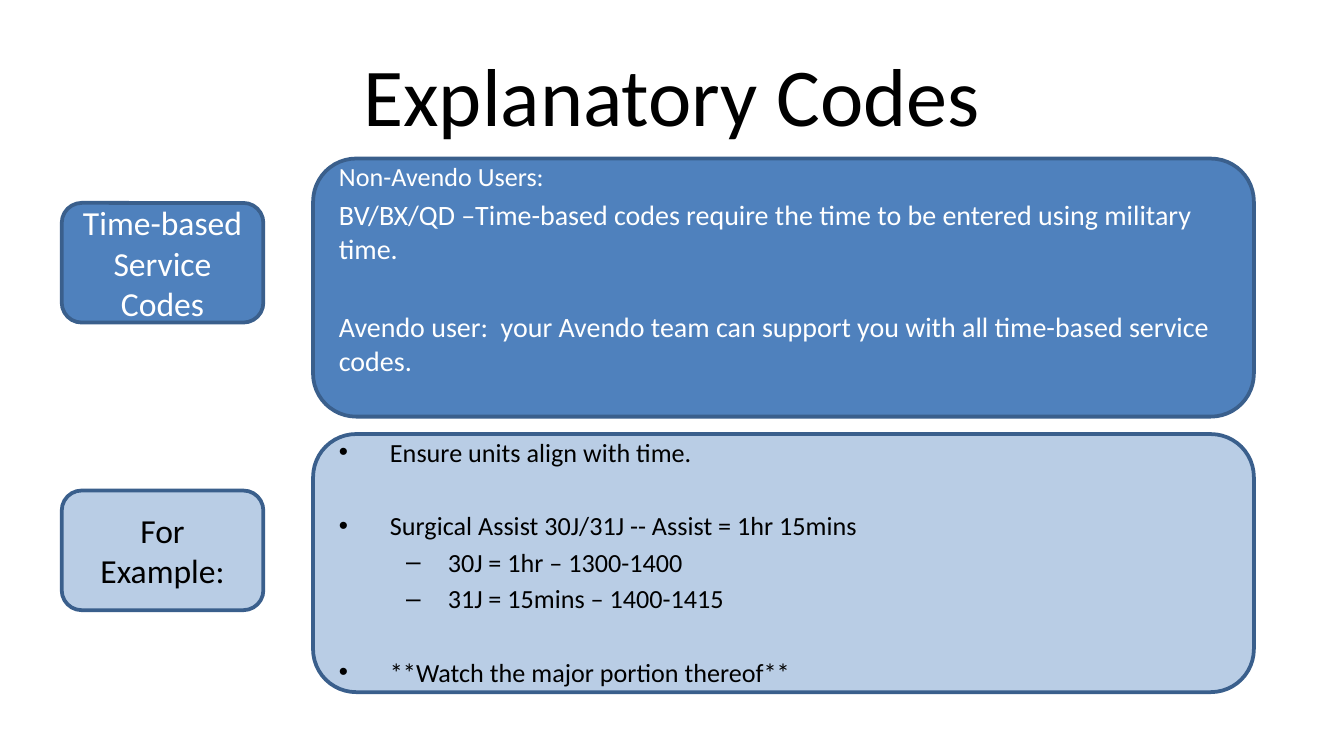
from dataclasses import dataclass

from lxml import etree
from pptx import Presentation
from pptx.dml.color import RGBColor
from pptx.enum.shapes import MSO_SHAPE
from pptx.enum.text import MSO_ANCHOR, PP_ALIGN
from pptx.oxml.ns import qn
from pptx.util import Inches, Pt

ROUNDED = MSO_SHAPE.ROUNDED_RECTANGLE
MIDDLE = MSO_ANCHOR.MIDDLE
LEFT, CENTER = PP_ALIGN.LEFT, PP_ALIGN.CENTER


@dataclass(frozen=True)
class Theme:
    font: str = "Calibri"
    black: RGBColor = RGBColor(0, 0, 0)
    white: RGBColor = RGBColor(255, 255, 255)
    blue: RGBColor = RGBColor(0x4F, 0x81, 0xBD)
    pale_blue: RGBColor = RGBColor(0xB9, 0xCD, 0xE5)
    outline: RGBColor = RGBColor(0x3A, 0x5F, 0x8C)
    title_size: float = 44
    label_size: float = 18
    body_size: float = 14
    large_body_size: float = 15
    line_gap: float = 2.8
    section_gap: float = 22.5


@dataclass(frozen=True)
class Bullet:
    char: str
    level: int
    margin: float
    hanging: float


@dataclass(frozen=True)
class Line:
    text: str
    size: float
    before: float = 0
    bullet: Bullet | None = None


@dataclass(frozen=True)
class Section:
    label: str
    label_top: float
    panel_top: float
    fill: RGBColor
    text_color: RGBColor
    lines: tuple[Line, ...]
    panel_bottom_inset: float


THEME = Theme()
LABEL_LEFT, LABEL_WIDTH, LABEL_HEIGHT = 0.46, 1.5, 0.89
PANEL_LEFT, PANEL_WIDTH, PANEL_HEIGHT = 2.33, 7, 1.92
DOT = Bullet("•", 0, 0.38, 0.38)
DASH = Bullet("–", 1, 0.81, 0.31)

BODY, LARGE = THEME.body_size, THEME.large_body_size
NEXT, APART = THEME.line_gap, THEME.section_gap

SECTIONS = (
    Section("Time-based Service Codes", 1.51, 1.18, THEME.blue, THEME.white, (
        Line("Non-Avendo Users:", BODY),
        Line("BV/BX/QD –Time-based codes require the time to be entered "
             "using military time.", LARGE, NEXT),
        Line("Avendo user:  your Avendo team can support you with all "
             "time-based service codes.", LARGE, APART + 1.5),
    ), panel_bottom_inset=0.33),
    Section("For Example:", 3.65, 3.23, THEME.pale_blue, THEME.black, (
        Line("Ensure units align with time.", BODY, bullet=DOT),
        Line("Surgical Assist 30J/31J -- Assist = 1hr 15mins", BODY, APART, DOT),
        Line("30J = 1hr – 1300-1400", BODY, NEXT, DASH),
        Line("31J = 15mins – 1400-1415", BODY, NEXT, DASH),
        Line("**Watch the major portion thereof**", BODY, APART, DOT),
    ), panel_bottom_inset=0.07),
)


def add_run(paragraph, text: str, size: float, color: RGBColor) -> None:
    run = paragraph.add_run()
    run.text = text
    run.font.name = THEME.font
    run.font.size = Pt(size)
    run.font.color.rgb = color


def set_bullet(paragraph, bullet: Bullet) -> None:
    paragraph.level = bullet.level
    properties = paragraph._p.get_or_add_pPr()
    properties.set("marL", str(Inches(bullet.margin)))
    properties.set("indent", str(-Inches(bullet.hanging)))
    etree.SubElement(properties, qn("a:buFont"), typeface="Arial")
    etree.SubElement(properties, qn("a:buChar"), char=bullet.char)


def add_box(slide, left: float, top: float, width: float, height: float,
            section: Section, lines: tuple[Line, ...], align: PP_ALIGN,
            bottom_inset: float = 0.05) -> None:
    box = slide.shapes.add_shape(
        ROUNDED, Inches(left), Inches(top), Inches(width), Inches(height))
    box.shadow.inherit = False
    box.fill.solid()
    box.fill.fore_color.rgb = section.fill
    box.line.color.rgb = THEME.outline
    box.line.width = Pt(2)

    frame = box.text_frame
    frame.word_wrap = True
    frame.vertical_anchor = MIDDLE
    frame.margin_bottom = Inches(bottom_inset)
    for index, line in enumerate(lines):
        paragraph = frame.add_paragraph() if index else frame.paragraphs[0]
        paragraph.alignment = align
        if line.before:
            paragraph.space_before = Pt(line.before)
        if line.bullet:
            set_bullet(paragraph, line.bullet)
        add_run(paragraph, line.text, line.size, section.text_color)


def add_section(slide, section: Section) -> None:
    add_box(slide, LABEL_LEFT, section.label_top, LABEL_WIDTH, LABEL_HEIGHT,
            section, (Line(section.label, THEME.label_size),), CENTER)
    add_box(slide, PANEL_LEFT, section.panel_top, PANEL_WIDTH, PANEL_HEIGHT,
            section, section.lines, LEFT, section.panel_bottom_inset)


def add_title(slide, text: str) -> None:
    title = slide.shapes.title
    title.left, title.top = Inches(0.5), Inches(0.23)
    title.width, title.height = Inches(9), Inches(0.94)
    title.text_frame.vertical_anchor = MIDDLE
    heading = title.text_frame.paragraphs[0]
    heading.alignment = CENTER
    add_run(heading, text, THEME.title_size, THEME.black)


def main() -> None:
    deck = Presentation()
    # Widescreen, 16:9
    deck.slide_width = Inches(10)
    deck.slide_height = deck.slide_width * 9 // 16
    slide = deck.slides.add_slide(deck.slide_layouts[5])  # title only

    add_title(slide, "Explanatory Codes")
    # Each section pairs a label with its explanation panel
    for section in SECTIONS:
        add_section(slide, section)

    deck.save("out.pptx")


if __name__ == "__main__":
    main()
